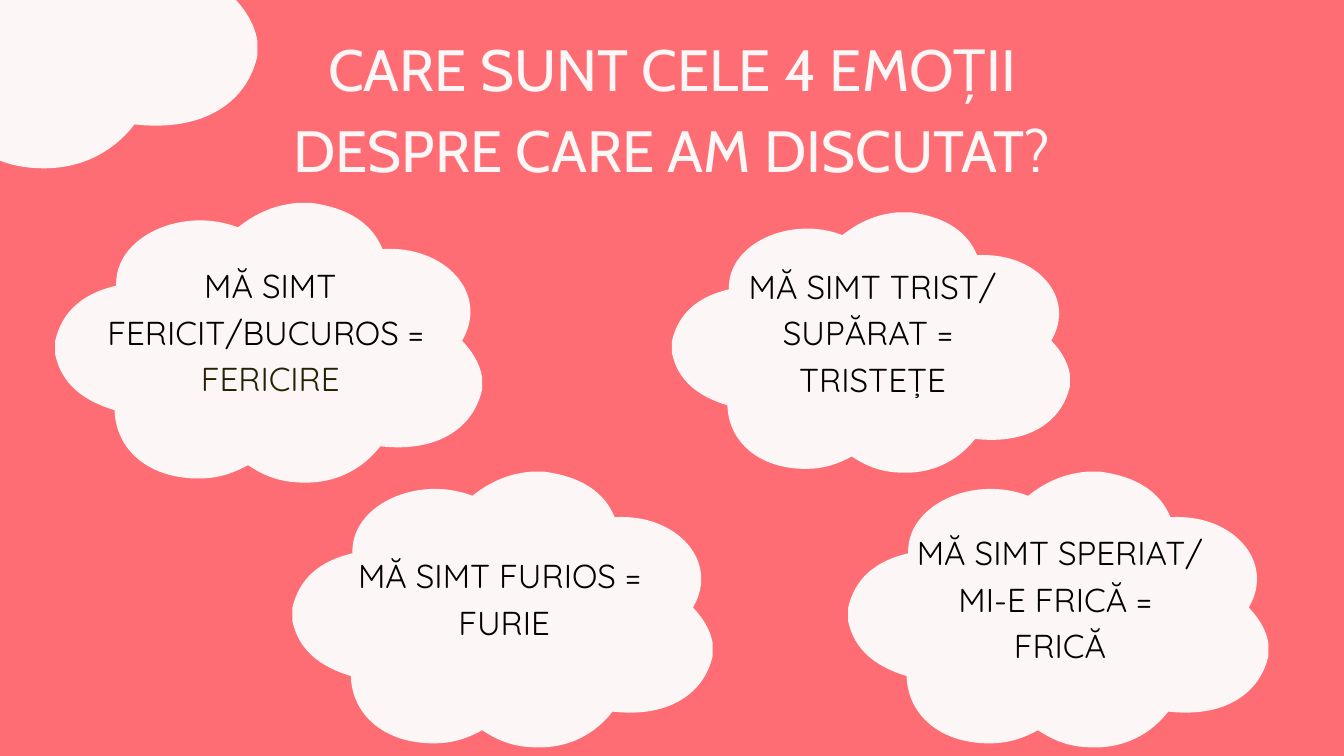
from lxml import etree
from pptx import Presentation
from pptx.dml.color import RGBColor
from pptx.enum.text import MSO_ANCHOR as Anchor, MSO_AUTO_SIZE as AutoSize, PP_ALIGN as Align
from pptx.oxml.ns import qn
from pptx.util import Inches, Pt

COLORS = {"coral": "FE6D73", "cloud": "FDF6F6", "black": "000000", "olive": "262103"}

# Cloud outline: a start point, then three points per Bézier curve
CLOUD_START = (52, -252)
CLOUD_CURVES = [
    (60, -252), (69, -252), (77, -252),
    (144, -243), (186, -215), (205, -169),
    (317, -176), (398, -89), (348, -4),
    (365, 14), (379, 34), (384, 61),
    (384, 68), (384, 76), (384, 84),
    (369, 152), (305, 198), (201, 186),
    (174, 221), (126, 256), (52, 251),
    (14, 249), (-13, 236), (-37, 220),
    (-61, 233), (-88, 244), (-126, 244),
    (-216, 244), (-275, 192), (-277, 121),
    (-334, 104), (-373, 73), (-384, 20),
    (-384, 12), (-384, 5), (-384, -3),
    (-372, -56), (-335, -89), (-274, -103),
    (-278, -191), (-155, -247), (-55, -208),
    (-31, -227), (3, -248), (52, -252),
]

# Left, top, width, height, and lines of (text, colour)
EMOTIONS = [
    (10, 3.16, 6.03, 3.91,
     [("MĂ SIMT TRIST/", "black"), ("SUPĂRAT = ", "black"), ("TRISTEȚE", "black")]),
    (0.82, 3.02, 6.47, 4.2,
     [("MĂ SIMT FERICIT/BUCUROS = ", "black"), ("FERICIRE", "olive")]),
    (12.62, 7.02, 6.37, 4.14,
     [("MĂ SIMT SPERIAT/", "black"), ("MI-E FRICĂ = ", "black"), ("FRICĂ", "black")]),
    (4.35, 7.02, 6.37, 4.14,
     [("MĂ SIMT FURIOS = ", "black"), ("FURIE", "black")]),
]


def write(box, lines, *, font, size, spacing, anchor, margin=0):
    frame = box.text_frame
    frame.word_wrap = True
    frame.vertical_anchor = anchor
    frame.margin_left = frame.margin_right = Inches(margin)
    frame.margin_top = frame.margin_bottom = Inches(margin)
    for index, (text, color) in enumerate(lines):
        para = frame.add_paragraph() if index else frame.paragraphs[0]
        para.alignment = Align.CENTER
        para.line_spacing = Pt(spacing)
        para.space_before = Pt(0)
        span = para.add_run()
        span.text = text
        span.font.name = font
        span.font.size = Pt(size)
        span.font.color.rgb = RGBColor.from_string(COLORS[color])


def add_cloud(shapes, left, top, width, height):
    """Draw the outline with straight segments, then turn each three into one curve."""
    builder = shapes.build_freeform(*CLOUD_START, scale=Inches(0.01))
    builder.add_line_segments(CLOUD_CURVES, close=True)
    cloud = builder.convert_to_shape()
    segments = list(cloud._element.iter(qn("a:lnTo")))
    for first in range(0, len(CLOUD_CURVES), 3):
        curve = etree.Element(qn("a:cubicBezTo"))
        segments[first].addprevious(curve)
        for segment in segments[first:first + 3]:
            curve.append(segment[0])
    for segment in segments:
        segment.getparent().remove(segment)
    cloud.left, cloud.top = Inches(left), Inches(top)
    cloud.width, cloud.height = Inches(width), Inches(height)
    cloud.shadow.inherit = False
    cloud.fill.solid()
    cloud.fill.fore_color.rgb = RGBColor.from_string(COLORS["cloud"])
    cloud.line.fill.background()


deck = Presentation()
deck.slide_width, deck.slide_height = Inches(20), Inches(11.25)
page = deck.slides.add_slide(deck.slide_layouts[5])
page.background.fill.solid()
page.background.fill.fore_color.rgb = RGBColor.from_string(COLORS["coral"])

title = page.shapes.title
title.left, title.top = Inches(3.59), Inches(0.32)
title.width, title.height = Inches(12.82), Inches(2.38)
write(title, [("CARE SUNT CELE 4 EMOȚII DESPRE CARE AM DISCUTAT?", "cloud")],
      font="Cabin", size=62.4, spacing=87.4, anchor=Anchor.TOP)
title.text_frame.auto_size = AutoSize.SHAPE_TO_FIT_TEXT

for left, top, width, height, lines in EMOTIONS:
    group = page.shapes.add_group_shape()
    add_cloud(group.shapes, left, top, width, height)
    label = group.shapes.add_textbox(
        Inches(left + 0.05 * width), Inches(top + 0.04 * height),
        Inches(0.89 * width), Inches(0.81 * height))
    write(label, lines, font="Quicksand", size=35.5, spacing=49.7,
          anchor=Anchor.MIDDLE, margin=0.06)

add_cloud(page.shapes, -3.84, -2.52, 7.81, 5.07)

deck.save("out.pptx")
